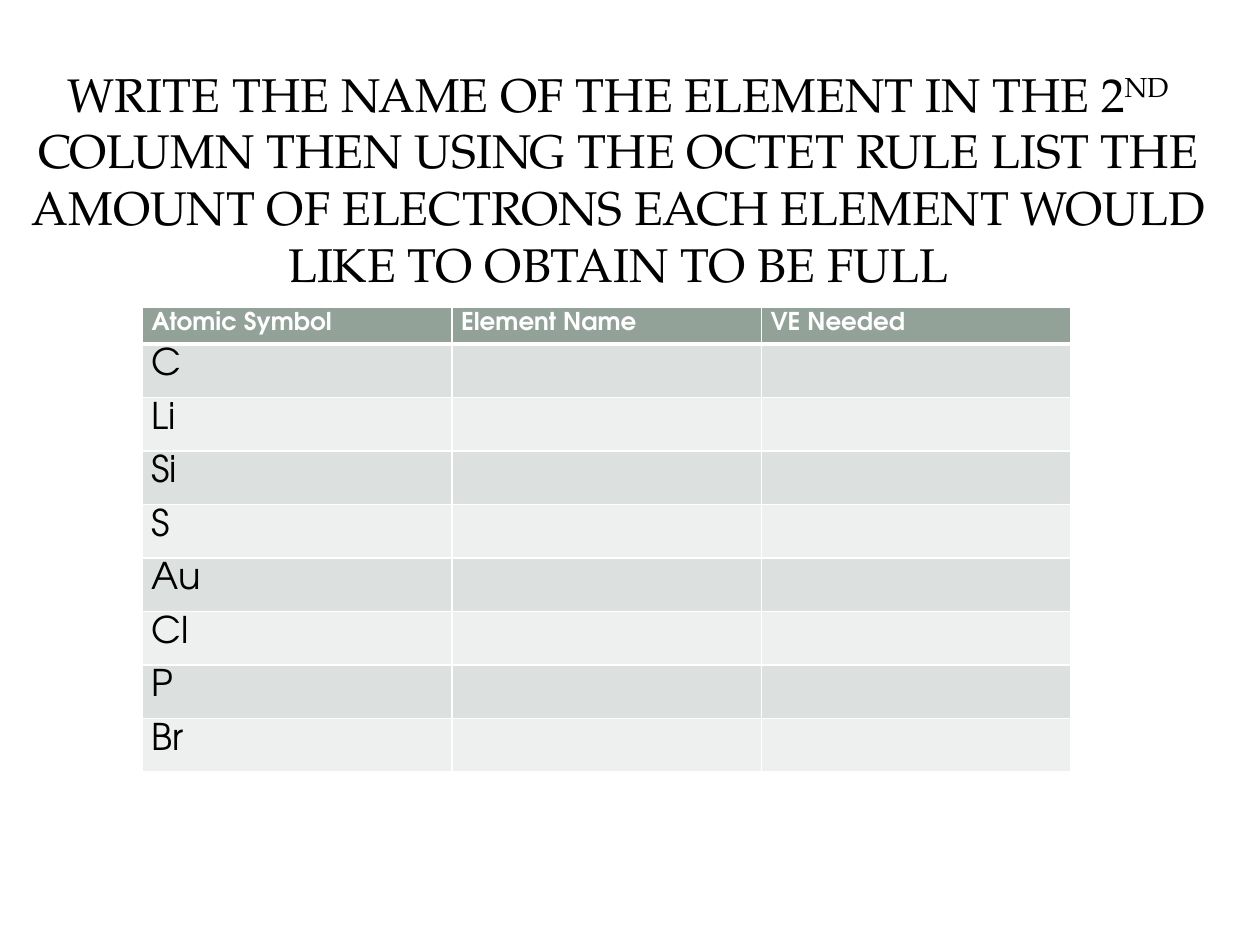
from dataclasses import dataclass

from lxml import etree
from pptx import Presentation
from pptx.dml.color import RGBColor
from pptx.enum import shapes, text
from pptx.oxml import ns
from pptx.util import Inches, Pt


@dataclass(frozen=True)
class Theme:
    title_font: str = "TeX Gyre Pagella"
    table_font: str = "TeX Gyre Adventor"
    ink: RGBColor = RGBColor(0x00, 0x00, 0x00)
    white: RGBColor = RGBColor(0xFF, 0xFF, 0xFF)
    header: RGBColor = RGBColor(0x93, 0xA2, 0x99)
    bands: tuple = (RGBColor(0xDC, 0xE0, 0xDE), RGBColor(0xEE, 0xF0, 0xEF))
    title_size: Pt = Pt(27)
    header_size: Pt = Pt(14)
    symbol_size: Pt = Pt(21)


theme = Theme()


def style_font(font, name, size, color, bold=False):
    font.name, font.size, font.bold = name, size, bold
    font.color.rgb = color


def add_borders(cell, top, bottom):
    """Draw white borders, 1 pt at the sides and the given widths above and below."""
    properties = cell._tc.get_or_add_tcPr()
    widths = {"lnL": 1, "lnR": 1, "lnT": top, "lnB": bottom}
    for position, (side, width) in enumerate(widths.items()):
        line = etree.Element(ns.qn(f"a:{side}"), w=str(Pt(width)))
        fill = etree.SubElement(line, ns.qn("a:solidFill"))
        etree.SubElement(fill, ns.qn("a:srgbClr"), val=str(theme.white))
        properties.insert(position, line)


deck = Presentation()
deck.slide_width, deck.slide_height = Inches(10), Inches(7.5)
page = deck.slides.add_slide(deck.slide_layouts[5])
title = page.shapes.title

# White page card and title panels, behind the title
panels = [
    (shapes.MSO_SHAPE.ROUNDED_RECTANGLE, (0.1, 0.11, 9.8, 7.29), 100),
    (shapes.MSO_SHAPE.RECTANGLE, (0.3, 0.3, 9.4, 1.45), 83),
    (shapes.MSO_SHAPE.RECTANGLE, (0.41, 0.41, 9.17, 1.22), 100),
]
for kind, bounds, opacity in panels:
    panel = page.shapes.add_shape(kind, *map(Inches, bounds))
    panel.shadow.inherit = False
    panel.line.fill.background()
    panel.fill.solid()
    panel.fill.fore_color.rgb = theme.white
    if kind == shapes.MSO_SHAPE.ROUNDED_RECTANGLE:
        panel.adjustments[0] = 0.02
    if opacity < 100:
        color = panel._element.spPr.find(f"{ns.qn('a:solidFill')}/{ns.qn('a:srgbClr')}")
        etree.SubElement(color, ns.qn("a:alpha"), val=str(opacity * 1000))
    title._element.addprevious(panel._element)

# Title
title.left, title.top = Inches(0), Inches(0.76)
title.width, title.height = Inches(9.81), Inches(1.31)
frame = title.text_frame
frame.word_wrap = True
frame.auto_size = text.MSO_AUTO_SIZE.NONE
frame.vertical_anchor = text.MSO_ANCHOR.MIDDLE
para = frame.paragraphs[0]
para.alignment = text.PP_ALIGN.CENTER
title_spans = [
    ("WRITE THE NAME OF THE ELEMENT IN THE 2", 0),
    ("ND", 30),
    (" COLUMN THEN USING THE OCTET RULE LIST THE AMOUNT OF ELECTRONS "
     "EACH ELEMENT WOULD LIKE TO OBTAIN TO BE FULL", 0),
]
style_font(para.font, theme.title_font, theme.title_size, theme.ink)
for words, raised in title_spans:
    span = para.add_run()
    span.text = words
    if raised:
        span._r.get_or_add_rPr().set("baseline", str(raised * 1000))

# Element table
headings = ["Atomic Symbol", "Element Name", "VE Needed"]
symbols = ["C", "Li", "Si", "S", "Au", "Cl", "P", "Br"]
rows = [headings] + [[symbol, "", ""] for symbol in symbols]
table = page.shapes.add_table(
    len(rows), len(headings),
    Inches(1.13), Inches(2.44), Inches(7.37), Inches(3.71),
).table
for column in table.columns:
    column.width = Inches(7.37 / len(headings))

for r, words in enumerate(rows):
    is_header = r == 0
    table.rows[r].height = Inches(0.29 if is_header else 3.4 / len(symbols))
    for c, word in enumerate(words):
        cell = table.cell(r, c)
        cell.margin_left = cell.margin_right = Pt(5.3)
        cell.margin_top = cell.margin_bottom = Pt(2.6)
        cell.fill.solid()
        cell.fill.fore_color.rgb = theme.header if is_header else theme.bands[(r - 1) % 2]
        add_borders(cell, top=3 if r == 1 else 1, bottom=3 if is_header else 1)
        cell.text = word
        style_font(
            cell.text_frame.paragraphs[0].font,
            theme.table_font,
            theme.header_size if is_header else theme.symbol_size,
            theme.white if is_header else theme.ink,
            bold=is_header,
        )

deck.save("out.pptx")
